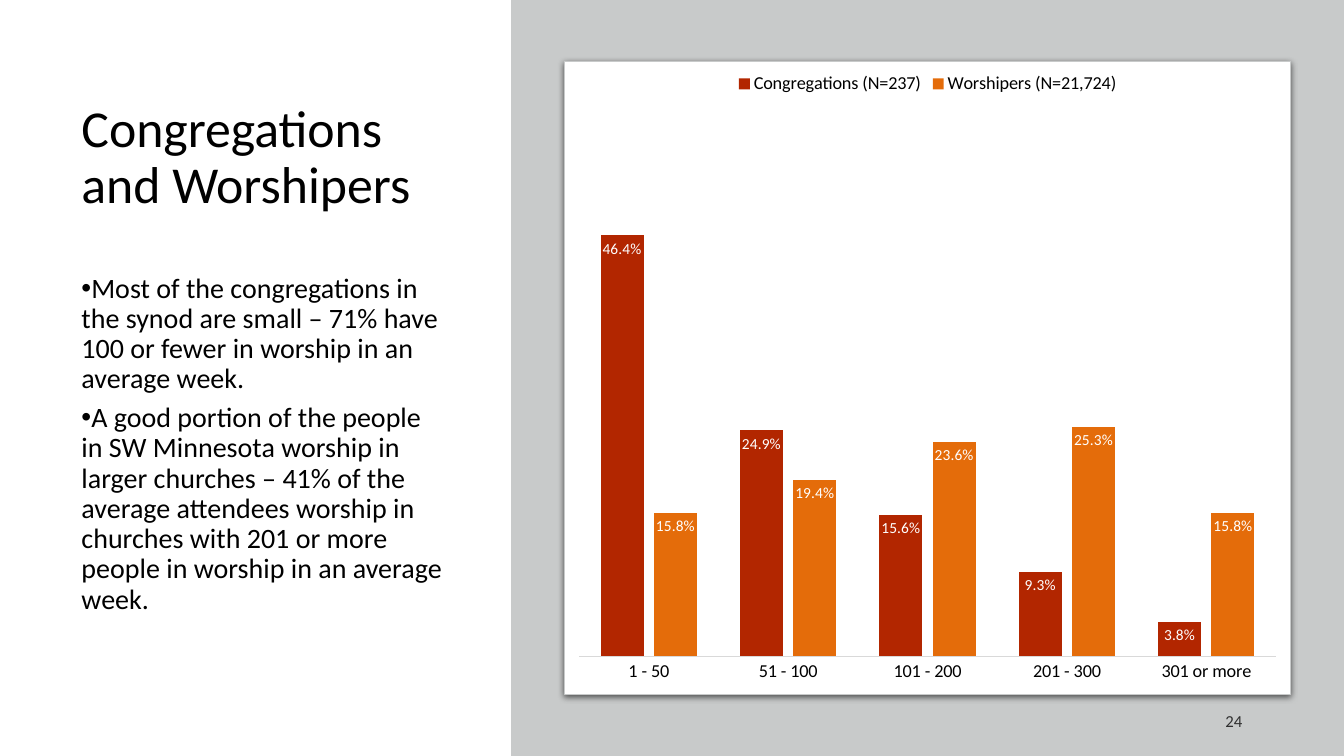
from dataclasses import dataclass
from lxml.etree import SubElement
from pptx import Presentation
from pptx.chart.data import CategoryChartData
from pptx.dml.color import RGBColor
from pptx.enum.chart import XL_CHART_TYPE, XL_LABEL_POSITION, XL_LEGEND_POSITION, XL_TICK_MARK
from pptx.enum.shapes import MSO_SHAPE
from pptx.enum.text import MSO_ANCHOR, PP_ALIGN
from pptx.oxml.ns import qn
from pptx.util import Inches, Pt


@dataclass(frozen=True)
class Theme:
    """Colours, font and type sizes of the slide."""
    font: str = "Calibri"
    ink: str = "000000"
    white: str = "FFFFFF"
    panel: str = "C8CACA"
    number: str = "303030"
    axis: str = "D9D9D9"
    bars: tuple = ("B22600", "E46C0A")
    title: int = 37
    body: int = 20
    key: int = 13
    note: int = 12
    label: int = 11
    base: int = 10


def tint(code):
    return RGBColor.from_string(code)


def child(node, tag, **attrs):
    return SubElement(node, qn(tag), {k: str(v) for k, v in attrs.items()})


class Deck:
    """Draws the elements of one slide in a given theme."""

    def __init__(self, theme):
        self.theme = theme
        self.file = Presentation()
        self.file.slide_width = Inches(13.33)
        self.file.slide_height = Inches(7.5)
        self.slide = self.file.slides.add_slide(self.file.slide_layouts[6])

    def style(self, font, size, color):
        font.name = self.theme.font
        font.size = Pt(size)
        font.color.rgb = tint(color)

    def text(self, box, *lines, size, color=None, anchor=MSO_ANCHOR.TOP,
             align=PP_ALIGN.LEFT, space=0.9, bullet=False):
        frame = self.slide.shapes.add_textbox(*map(Inches, box)).text_frame
        frame.word_wrap = True
        frame.vertical_anchor = anchor
        for i, line in enumerate(lines):
            para = frame.add_paragraph() if i else frame.paragraphs[0]
            para.alignment = align
            para.line_spacing = space
            para.space_after = Pt(6)
            run = para.add_run()
            run.text = line
            self.style(run.font, size, color or self.theme.ink)
            if bullet:
                props = para._p.get_or_add_pPr()
                props.set("marL", "0")
                props.set("indent", str(-Inches(0.25)))
                child(props, "a:buFont", typeface="Arial")
                child(props, "a:buChar", char="•")

    def block(self, box, fill, kind=MSO_SHAPE.RECTANGLE, line=None, shade=False):
        shape = self.slide.shapes.add_shape(kind, *map(Inches, box))
        shape.shadow.inherit = False
        shape.fill.solid()
        shape.fill.fore_color.rgb = tint(fill)
        if line:
            shape.line.color.rgb = tint(line)
            shape.line.width = Pt(0.75)
        else:
            shape.line.fill.background()
        if shade:
            glow = child(shape._element.spPr.find(qn("a:effectLst")), "a:outerShdw",
                         blurRad=Pt(4.5), dist=Pt(1.5), dir=90 * 60000,
                         algn="ctr", rotWithShape=0)
            child(child(glow, "a:srgbClr", val=self.theme.ink), "a:alpha", val=63000)
        return shape

    def chart(self, box, cats, rows, area):
        theme = self.theme
        data = CategoryChartData(number_format="0.0%")
        data.categories = cats
        for name, vals in rows.items():
            data.add_series(name, vals)
        chart = self.slide.shapes.add_chart(
            XL_CHART_TYPE.COLUMN_CLUSTERED, *map(Inches, box), data).chart
        self.style(chart.font, theme.base, theme.ink)
        chart.has_title = False
        chart.has_legend = True
        chart.legend.position = XL_LEGEND_POSITION.TOP
        chart.legend.include_in_layout = False
        self.style(chart.legend.font, theme.key, theme.ink)

        base = chart.category_axis
        base.major_tick_mark = XL_TICK_MARK.NONE
        base.format.line.color.rgb = tint(theme.axis)
        base.format.line.width = Pt(1)
        self.style(base.tick_labels.font, theme.key, theme.ink)
        scale = chart.value_axis
        scale.visible = False
        scale.has_major_gridlines = False
        scale.minimum_scale, scale.maximum_scale = 0, 0.6
        scale.major_unit = 0.3

        plot = chart.plots[0]
        plot.gap_width, plot.overlap = 100, -24
        plot.vary_by_categories = False
        for series, color in zip(plot.series, theme.bars):
            series.format.fill.solid()
            series.format.fill.fore_color.rgb = tint(color)
            labels = series.data_labels
            labels.show_value = True
            labels.position = XL_LABEL_POSITION.INSIDE_END
            labels.number_format = "0.0%"
            labels.number_format_is_linked = False
            self.style(labels.font, theme.label, theme.white)
        self.place(chart, area)

    def place(self, chart, area):
        room = chart._chartSpace.chart.plotArea
        for old in room.findall(qn("c:layout")):
            room.remove(old)
        layout = child(room, "c:layout")
        room.insert(0, layout)
        spot = child(layout, "c:manualLayout")
        child(spot, "c:layoutTarget", val="inner")
        for side in "xy":
            child(spot, f"c:{side}Mode", val="edge")
        for key, val in zip("xywh", area):
            child(spot, f"c:{key}", val=val)


def main():
    theme = Theme()
    deck = Deck(theme)
    card = (5.6, 0.61, 7.2, 6.28)
    deck.text((0.71, 0.69, 3.83, 1.77), "Congregations and Worshipers",
              size=theme.title, anchor=MSO_ANCHOR.MIDDLE)
    deck.text((0.71, 2.67, 3.83, 4.14),
              "Most of the congregations in the synod are small – 71% have 100 or fewer "
              "in worship in an average week.",
              "A good portion of the people in SW Minnesota worship in larger churches – "
              "41% of the average attendees worship in churches with 201 or more people "
              "in worship in an average week.",
              size=theme.body, bullet=True)
    deck.block((5.07, 0, 8.26, 7.5), theme.panel)
    frame = deck.block(card, theme.white, MSO_SHAPE.ROUNDED_RECTANGLE, theme.panel, True)
    frame.adjustments[0] = 0
    deck.text((9.42, 6.95, 3, 0.4), "24", size=theme.note, color=theme.number,
              anchor=MSO_ANCHOR.MIDDLE, align=PP_ALIGN.RIGHT, space=1.0)
    deck.chart(card, ["1 - 50", "51 - 100", "101 - 200", "201 - 300", "301 or more"],
               {"Congregations (N=237)": (0.464, 0.249, 0.156, 0.093, 0.038),
                "Worshipers (N=21,724)": (0.158, 0.194, 0.236, 0.253, 0.158)},
               (0.02, 0.08, 0.96, 0.86))
    deck.file.save("out.pptx")


if __name__ == "__main__":
    main()
